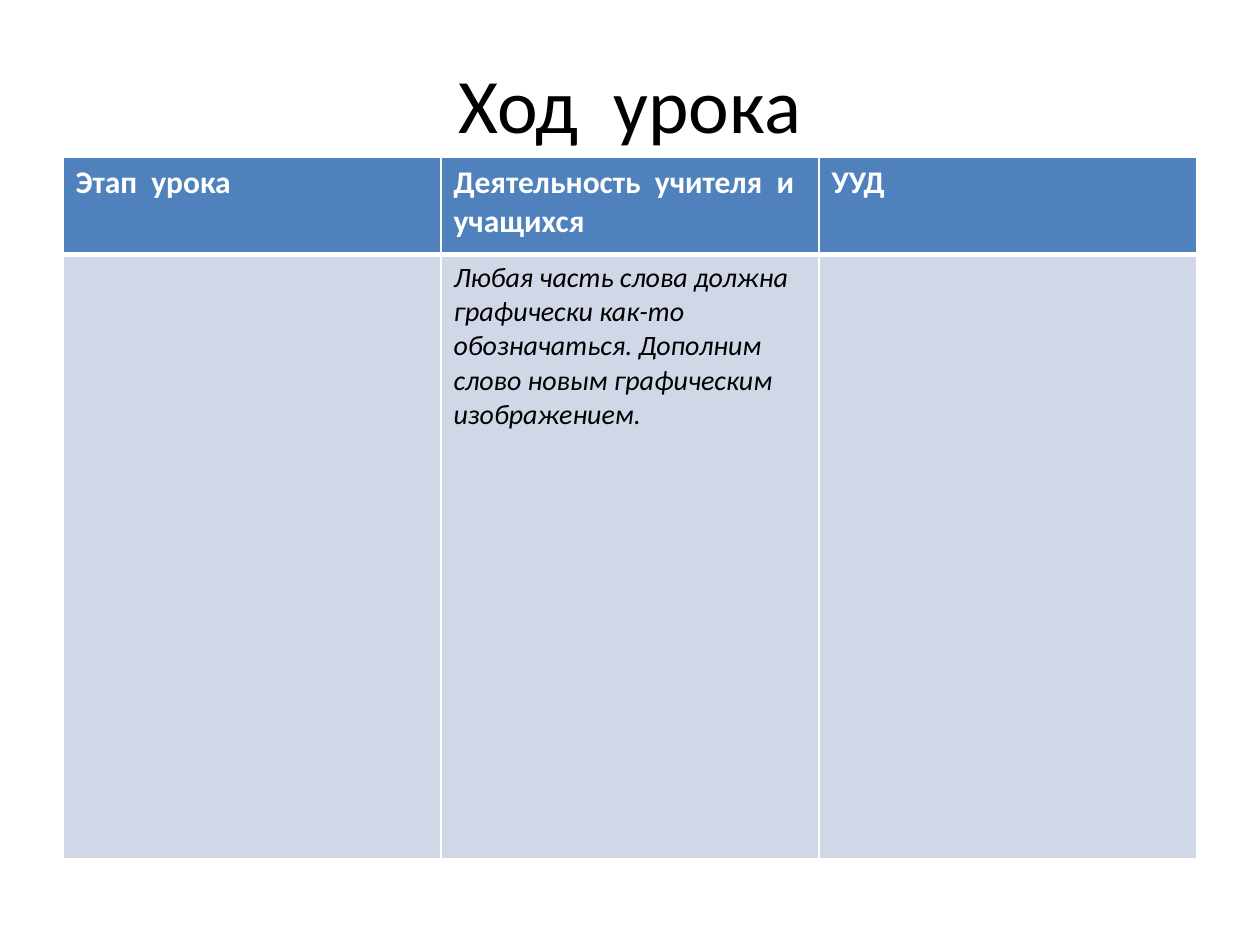
from dataclasses import dataclass

from lxml import etree
from pptx import Presentation
from pptx.dml.color import RGBColor
from pptx.enum.text import MSO_ANCHOR, PP_ALIGN
from pptx.oxml.ns import qn
from pptx.util import Pt

CENTER = PP_ALIGN.CENTER
LEFT = PP_ALIGN.LEFT
MIDDLE = MSO_ANCHOR.MIDDLE
TOP = MSO_ANCHOR.TOP
TITLE_ONLY = 5

HEADERS = ["Этап  урока", "Деятельность  учителя  и  учащихся", "УУД"]
STEPS = ["", "Любая часть слова должна графически как-то обозначаться. "
             "Дополним слово новым графическим изображением.", ""]


@dataclass(frozen=True)
class Theme:
    font: str = "Calibri"
    dark: str = "000000"
    light: str = "FFFFFF"
    header_fill: str = "4F81BD"
    body_fill: str = "D0D8E8"
    title_size: int = 44
    header_size: int = 18
    body_size: int = 16
    thin: int = 1
    thick: int = 3


class LessonSlide:
    """Holds the theme and the current slide, and adds elements to it."""

    def __init__(self, prs, theme):
        self.theme = theme
        self.slide = prs.slides.add_slide(prs.slide_layouts[TITLE_ONLY])

    def text(self, tf, text, size, color, align=LEFT, **formats):
        p = tf.paragraphs[0]
        p.alignment = align
        if not text:
            return
        r = p.add_run()
        r.text = text
        r.font.color.rgb = RGBColor.from_string(color)
        values = {"name": self.theme.font, "size": Pt(size), **formats}
        for name, value in values.items():
            setattr(r.font, name, value)

    def title(self, text, left, top, width, height):
        sp = self.slide.shapes.title
        box = {"left": left, "top": top, "width": width, "height": height}
        for name, value in box.items():
            setattr(sp, name, Pt(value))
        sp.text_frame.vertical_anchor = MIDDLE
        self.text(sp.text_frame, text, self.theme.title_size, self.theme.dark, CENTER)

    def borders(self, cell, widths):
        tc_pr = cell._tc.get_or_add_tcPr()
        for side, width in widths.items():
            ln = etree.SubElement(tc_pr, qn(f"a:ln{side}"), w=str(Pt(width)))
            fill = etree.SubElement(ln, qn("a:solidFill"))
            etree.SubElement(fill, qn("a:srgbClr"), val=self.theme.light)

    def table(self, rows, left, top, width, heights):
        t = self.theme
        styles = [
            (t.header_fill, {"L": t.thin, "R": t.thin, "T": t.thin, "B": t.thick},
             {"size": t.header_size, "color": t.light, "bold": True}),
            (t.body_fill, {"L": t.thin, "R": t.thin, "T": t.thick, "B": t.thin},
             {"size": t.body_size, "color": t.dark, "bold": False, "italic": True}),
        ]
        table = self.slide.shapes.add_table(
            len(rows), len(rows[0]), Pt(left), Pt(top), Pt(width), Pt(sum(heights))).table
        for column in table.columns:
            column.width = Pt(width / len(rows[0]))
        for row, texts, height, style in zip(table.rows, rows, heights, styles):
            row.height = Pt(height)
            fill, widths, formats = style
            for cell, text in zip(row.cells, texts):
                cell.vertical_anchor = TOP
                self.borders(cell, widths)
                cell.fill.solid()
                cell.fill.fore_color.rgb = RGBColor.from_string(fill)
                self.text(cell.text_frame, text, **formats)


def main():
    prs = Presentation()
    prs.slide_width, prs.slide_height = Pt(720), Pt(540)
    s = LessonSlide(prs, Theme())
    s.title("Ход  урока", 36, 21.6, 648, 74.2)
    s.table([HEADERS, STEPS], 36, 90, 648, [55.4, 345.6])
    prs.save("out.pptx")


if __name__ == "__main__":
    main()
